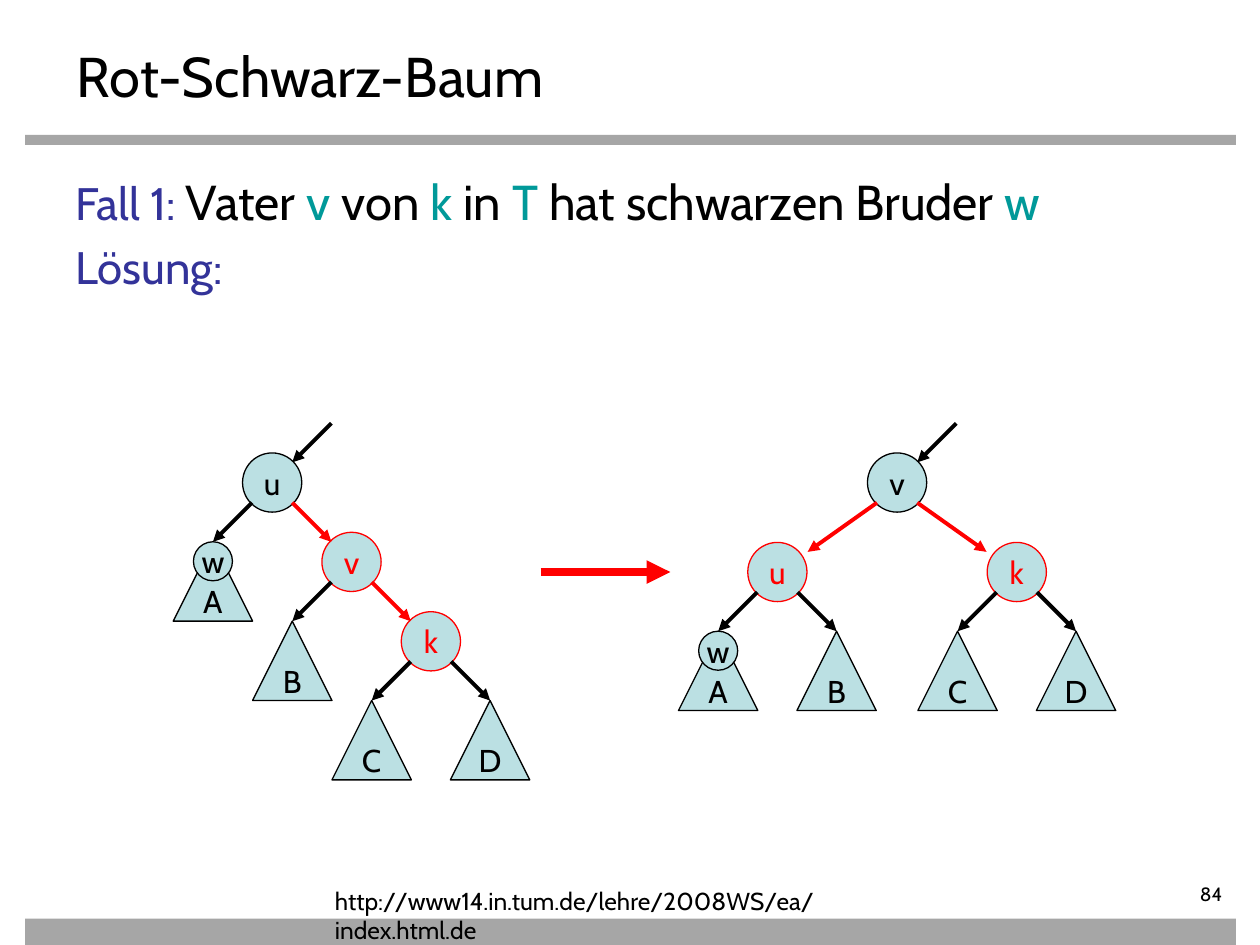
"""Build the slide on case 1 of red-black tree insertion."""
from lxml import etree
from pptx import Presentation
from pptx.dml.color import RGBColor
from pptx.enum.shapes import MSO_CONNECTOR, MSO_SHAPE
from pptx.enum.text import MSO_ANCHOR, MSO_AUTO_SIZE, PP_ALIGN
from pptx.oxml.ns import qn
from pptx.util import Inches, Pt

STRAIGHT = MSO_CONNECTOR.STRAIGHT
RECTANGLE, OVAL, TRIANGLE = MSO_SHAPE.RECTANGLE, MSO_SHAPE.OVAL, MSO_SHAPE.ISOSCELES_TRIANGLE
TOP, MIDDLE = MSO_ANCHOR.TOP, MSO_ANCHOR.MIDDLE
LEFT, CENTER, RIGHT = PP_ALIGN.LEFT, PP_ALIGN.CENTER, PP_ALIGN.RIGHT
FIXED, GROW = MSO_AUTO_SIZE.NONE, MSO_AUTO_SIZE.SHAPE_TO_FIT_TEXT

BLACK = RGBColor(0x00, 0x00, 0x00)
RED = RGBColor(0xFF, 0x00, 0x00)
GREY = RGBColor(0xA6, 0xA6, 0xA6)
BLUE = RGBColor(0x33, 0x33, 0x99)
TEAL = RGBColor(0x00, 0x99, 0x99)
PALE = RGBColor(0xBB, 0xE0, 0xE3)
FONT = "Cabin"

TITLE = "Rot-Schwarz-Baum"
STATEMENT = [
    [("Fall 1: ", 26, BLUE), ("Vater ", 28, BLACK), ("v", 28, TEAL), (" von ", 28, BLACK),
     ("k ", 28, TEAL), ("in ", 28, BLACK), ("T", 28, TEAL),
     (" hat schwarzen Bruder ", 28, BLACK), ("w", 28, TEAL)],
    [("Lösung:", 26, BLUE)],
]
SOURCE = [[("http://www14.in.tum.de/lehre/2008WS/ea/index.html.de", 14, BLACK)]]
PAGE = [[("84", 11, BLACK)]]
BARS = [(0.2, 1.07, 9.61, 0.08), (0.2, 7.29, 9.61, 0.21)]

BEFORE = ("u", BLACK, "A", ("v", RED, "B", ("k", RED, "C", "D")))
AFTER = ("v", BLACK, ("u", RED, "A", "B"), ("k", RED, "C", "D"))
TREES = [
    {"root": BEFORE, "x": 2.16, "y": 3.83, "step": (0.63, 0.63), "gap": 0.16},
    {"root": AFTER, "x": 7.12, "y": 3.83, "step": (0.95, 0.71), "gap": 0.24},
]
NODE, SIBLING, SUBTREE = 0.47, 0.31, 0.63
CORNER = 0.16
SIBLING_PARENT = "A"


def write(frame, paragraphs, align=LEFT, **formats):
    for attribute, value in formats.items():
        setattr(frame, attribute, value)
    for index, runs in enumerate(paragraphs):
        paragraph = frame.paragraphs[0] if index == 0 else frame.add_paragraph()
        paragraph.alignment = align
        paragraph.space_before = Pt(5 if index else 0)
        for text, size, color in runs:
            run = paragraph.add_run()
            run.text = text
            run.font.name, run.font.size = FONT, Pt(size)
            run.font.color.rgb = color


def add_text(slide, box, paragraphs, align=LEFT, **formats):
    frame = slide.shapes.add_textbox(*map(Inches, box)).text_frame
    write(frame, paragraphs, align, word_wrap=True, **formats)


def add_bar(slide, box):
    bar = slide.shapes.add_shape(RECTANGLE, *map(Inches, box))
    bar.shadow.inherit = False
    bar.fill.solid()
    bar.fill.fore_color.rgb = GREY
    bar.line.fill.background()


def add_arrow(slide, start, end, color=BLACK, width=2.25):
    arrow = slide.shapes.add_connector(STRAIGHT, *map(Inches, start + end))
    arrow.line.color.rgb = color
    arrow.line.width = Pt(width)
    etree.SubElement(arrow.line._ln, qn("a:tailEnd"), type="triangle")
    etree.SubElement(arrow._element.spPr, qn("a:effectLst"))


def add_label(slide, kind, center_x, top, size, label, color=BLACK):
    box = (center_x - size / 2, top, size, size)
    shape = slide.shapes.add_shape(kind, *map(Inches, box))
    shape.shadow.inherit = False
    shape.fill.solid()
    shape.fill.fore_color.rgb = PALE
    shape.line.color.rgb = color
    shape.line.width = Pt(0.75)
    write(shape.text_frame, [[(label, 18, color)]], CENTER,
          word_wrap=False, vertical_anchor=MIDDLE)


def add_subtree(slide, label, x, top):
    add_label(slide, TRIANGLE, x, top, SUBTREE, label)
    if label == SIBLING_PARENT:
        add_label(slide, OVAL, x, top, SIBLING, "w")


def add_node(slide, node, x, y, step, gap):
    label, color, *children = node
    add_label(slide, OVAL, x, y - NODE / 2, NODE, label, color)
    for side, child in zip((-1, 1), children):
        start = (x + side * CORNER, y + CORNER)
        if isinstance(child, str):
            tip = (x + side * NODE, y + NODE)
            add_subtree(slide, child, *tip)
            add_arrow(slide, start, tip)
        else:
            child_x, child_y = x + side * step[0], y + step[1]
            add_node(slide, child, child_x, child_y, step, gap)
            add_arrow(slide, start, (child_x - side * gap, child_y - CORNER), RED)


def add_tree(slide, root, x, y, step, gap):
    add_arrow(slide, (x + NODE, y - NODE), (x + CORNER, y - CORNER))
    add_node(slide, root, x, y, step, gap)


def main():
    deck = Presentation()
    deck.slide_width, deck.slide_height = Inches(10), Inches(7.5)
    slide = deck.slides.add_slide(deck.slide_layouts[5])
    for bar in BARS:
        add_bar(slide, bar)

    title = slide.shapes.title
    title.left, title.top, title.width, title.height = map(Inches, (0.51, 0.28, 9, 0.55))
    write(title.text_frame, [[(TITLE, 32, BLACK)]], vertical_anchor=TOP, auto_size=FIXED)

    add_text(slide, (0.5, 1.31, 9, 5.43), STATEMENT)
    add_text(slide, (2.56, 6.98, 5, 0.34), SOURCE, auto_size=GROW)
    add_text(slide, (8.7, 7, 1.1, 0.22), PAGE, RIGHT, margin_left=0, margin_top=0,
             margin_bottom=0)

    add_arrow(slide, (4.29, 4.54), (5.32, 4.54), RED, 4.5)
    for tree in TREES:
        add_tree(slide, **tree)
    deck.save("out.pptx")


if __name__ == "__main__":
    main()
